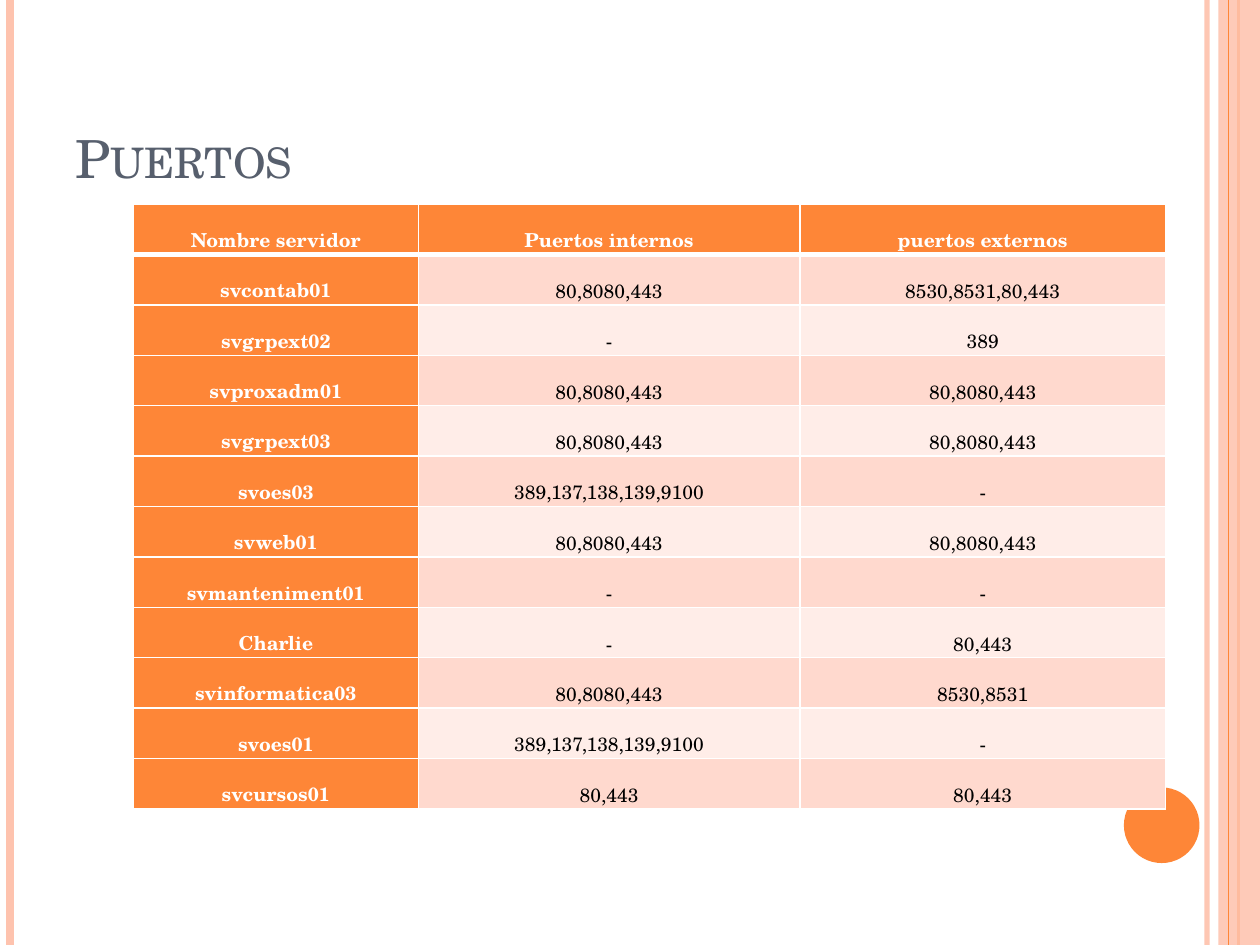
from lxml.etree import SubElement
from pptx import Presentation
from pptx.dml.color import RGBColor
from pptx.enum.shapes import MSO_CONNECTOR, MSO_SHAPE
from pptx.enum.text import MSO_ANCHOR, PP_ALIGN
from pptx.oxml.ns import qn
from pptx.util import Inches, Pt

FONT = "TeX Gyre Schola"
ORANGE, PEACH, SLATE = "FE8637", "FEC3AE", "575F6D"
WHITE, BLACK = "FFFFFF", "000000"
BANDS = ["FFD9CE", "FFEDE8"]

TITLE = "Puertos"
HEADER = ("Nombre servidor", "Puertos internos", "puertos externos")
SERVERS = [
    ("svcontab01", "80,8080,443", "8530,8531,80,443"),
    ("svgrpext02", "-", "389"),
    ("svproxadm01", "80,8080,443", "80,8080,443"),
    ("svgrpext03", "80,8080,443", "80,8080,443"),
    ("svoes03", "389,137,138,139,9100", "-"),
    ("svweb01", "80,8080,443", "80,8080,443"),
    ("svmanteniment01", "-", "-"),
    ("Charlie", "-", "80,443"),
    ("svinformatica03", "80,8080,443", "8530,8531"),
    ("svoes01", "389,137,138,139,9100", "-"),
    ("svcursos01", "80,443", "80,443"),
]
COLUMN_WIDTHS = [2.26, 3.03, 2.9]
ROW_HEIGHT = 0.4

# Vertical rules: x, colour, width in points, opacity in percent
LEFT_RULES = [(9.58, PEACH, 3, 93), (0.08, PEACH, 4.5, 100), (9.83, ORANGE, 1.5, 100)]
BAND_RULE = (9.75, ORANGE, 0.75, 100)


def color(hex_value):
    return RGBColor.from_string(hex_value)


def set_opacity(element, percent):
    for color_element in element.iter(qn("a:srgbClr")):
        SubElement(color_element, qn("a:alpha")).set("val", str(percent * 1000))


def add_rule(slide, x, hex_value, width, opacity):
    rule = slide.shapes.add_connector(
        MSO_CONNECTOR.STRAIGHT, Inches(x), 0, Inches(x), Inches(7.5))
    rule.line.color.rgb = color(hex_value)
    rule.line.width = Pt(width)
    properties = rule._element.spPr
    if opacity < 100:
        set_opacity(properties, opacity)
    SubElement(properties, qn("a:effectLst"))


def add_filled(slide, kind, box, hex_value):
    shape = slide.shapes.add_shape(kind, *map(Inches, box))
    shape.shadow.inherit = False
    shape.fill.solid()
    shape.fill.fore_color.rgb = color(hex_value)
    shape.line.fill.background()
    return shape


def style_font(paragraph, size, hex_value, bold=False):
    font = paragraph.font
    font.name, font.size, font.bold = FONT, Pt(size), bold
    font.color.rgb = color(hex_value)


def set_borders(cell, widths):
    properties = cell._tc.get_or_add_tcPr()
    for side, width in zip(("L", "R", "T", "B"), widths):
        line = SubElement(properties, qn(f"a:ln{side}"), w=str(Pt(width)))
        fill = SubElement(line, qn("a:solidFill"))
        SubElement(fill, qn("a:srgbClr")).set("val", WHITE)


def fill_cell(cell, text, row, column):
    is_heading = row == 0 or column == 0
    set_borders(cell, (1, 1, 3 if row == 1 else 1, 3 if row == 0 else 1))
    cell.fill.solid()
    cell.fill.fore_color.rgb = color(ORANGE if is_heading else BANDS[(row - 1) % 2])
    cell.vertical_anchor = MSO_ANCHOR.BOTTOM
    cell.margin_left = cell.margin_right = Inches(0.05)
    cell.margin_top = cell.margin_bottom = 0
    cell.text = text
    paragraph = cell.text_frame.paragraphs[0]
    paragraph.alignment = PP_ALIGN.CENTER
    paragraph.line_spacing = 1.15
    style_font(paragraph, 11, WHITE if is_heading else BLACK, is_heading)


def add_title(slide):
    box = slide.shapes.add_textbox(*map(Inches, (0.5, 0.3, 8.17, 1.25)))
    frame = box.text_frame
    frame.word_wrap = True
    frame.vertical_anchor = MSO_ANCHOR.BOTTOM
    paragraph = frame.paragraphs[0]
    run = paragraph.add_run()
    run.text = TITLE
    style_font(paragraph, 30, SLATE)
    run._r.get_or_add_rPr().set("cap", "small")


def add_server_table(slide):
    rows = [HEADER, *SERVERS]
    table = slide.shapes.add_table(
        len(rows), len(HEADER), Inches(1.06), Inches(1.62),
        Inches(sum(COLUMN_WIDTHS)), Inches(ROW_HEIGHT * len(rows))).table
    table.first_col = True
    for column, width in zip(table.columns, COLUMN_WIDTHS):
        column.width = Inches(width)
    for row, texts in enumerate(rows):
        table.rows[row].height = Inches(ROW_HEIGHT)
        for column, text in enumerate(texts):
            fill_cell(table.cell(row, column), text, row, column)


def main():
    presentation = Presentation()
    presentation.slide_width, presentation.slide_height = Inches(10), Inches(7.5)
    slide = presentation.slides.add_slide(presentation.slide_layouts[6])

    # Side decoration
    for rule in LEFT_RULES:
        add_rule(slide, *rule)
    band = add_filled(slide, MSO_SHAPE.RECTANGLE, (9.67, 0, 0.33, 7.5), PEACH)
    set_opacity(band._element.spPr, 87)
    add_rule(slide, *BAND_RULE)
    add_filled(slide, MSO_SHAPE.OVAL, (8.92, 6.25, 0.6, 0.6), ORANGE)

    # Content
    add_title(slide)
    add_server_table(slide)
    presentation.save("out.pptx")


if __name__ == "__main__":
    main()
